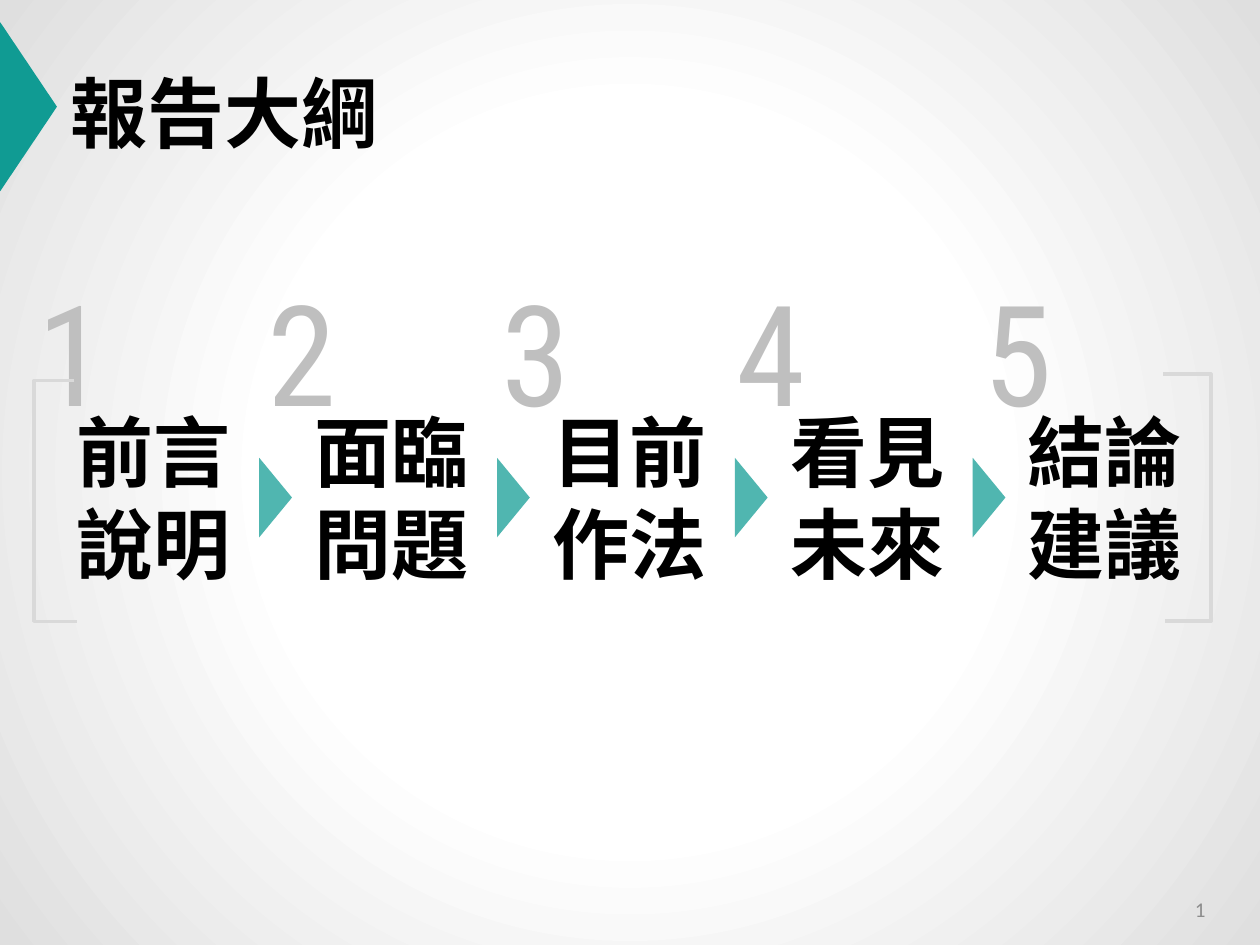
"""Builds the report outline slide with five numbered sections."""
from lxml import etree
from pptx import Presentation
from pptx.dml.color import RGBColor
from pptx.enum.shapes import MSO_SHAPE
from pptx.enum.text import MSO_ANCHOR, MSO_AUTO_SIZE, PP_ALIGN
from pptx.oxml.ns import qn
from pptx.util import Pt

TRIANGLE = MSO_SHAPE.ISOSCELES_TRIANGLE
LEFT, RIGHT = PP_ALIGN.LEFT, PP_ALIGN.RIGHT
TOP, MIDDLE = MSO_ANCHOR.TOP, MSO_ANCHOR.MIDDLE
GROW, FIXED = MSO_AUTO_SIZE.SHAPE_TO_FIT_TEXT, MSO_AUTO_SIZE.NONE


def color(hex_code):
    return RGBColor.from_string(hex_code)


class OutlineSlide:
    """Holds the style and the current slide."""

    TEAL, BLACK, NUMBER_GRAY = "109B93", "000000", "BFBFBF"
    BRACKET_GRAY, PAGE_GRAY = "D9D9D9", "8C8C8C"
    HEADING_FONT, NUMBER_FONT, PAGE_FONT = "Noto Sans CJK SC", "Roboto Condensed", "Calibri"

    def __init__(self, slide):
        self.slide = slide

    def background(self, stops):
        self.slide.background.fill.gradient()
        gradient = next(self.slide.element.iter(qn("a:gradFill")))
        for child in list(gradient):
            gradient.remove(child)
        stop_list = etree.SubElement(gradient, qn("a:gsLst"))
        for percent, hex_code in stops:
            stop = etree.SubElement(stop_list, qn("a:gs"), pos=str(percent * 1000))
            etree.SubElement(stop, qn("a:srgbClr"), val=hex_code)
        circle = etree.SubElement(gradient, qn("a:path"), path="circle")
        etree.SubElement(circle, qn("a:fillToRect"), l="50000", t="50000", r="50000", b="50000")

    def fill_text(self, frame, text, size, font, hex_code, bold=False,
                  align=LEFT, anchor=TOP, fit=GROW):
        frame.text = text
        frame.word_wrap = True
        frame.auto_size = fit
        frame.vertical_anchor = anchor
        for paragraph in frame.paragraphs:
            paragraph.alignment = align
            for run in paragraph.runs:
                run.font.size = Pt(size)
                run.font.name = font
                run.font.bold = bold
                run.font.color.rgb = color(hex_code)
                etree.SubElement(run.font._element, qn("a:ea"), typeface=font)

    def title(self, text, left, top, width, height):
        heading = self.slide.shapes.title
        heading.left, heading.top = Pt(left), Pt(top)
        heading.width, heading.height = Pt(width), Pt(height)
        self.fill_text(heading.text_frame, text, 44, self.HEADING_FONT, self.BLACK, bold=True)

    def text(self, shapes, text, left, top, width, height, *style, **options):
        box = shapes.add_textbox(Pt(left), Pt(top), Pt(width), Pt(height))
        self.fill_text(box.text_frame, text, *style, **options)

    def pointer(self, shapes, left, top, width, height, opacity=100):
        pointer = shapes.add_shape(TRIANGLE, Pt(left), Pt(top), Pt(width), Pt(height))
        pointer.rotation = 90
        pointer.shadow.inherit = False
        pointer.line.fill.background()
        pointer.fill.solid()
        pointer.fill.fore_color.rgb = color(self.TEAL)
        if opacity < 100:
            fill_color = next(pointer.element.iter(qn("a:srgbClr")))
            etree.SubElement(fill_color, qn("a:alpha"), val=str(opacity * 1000))

    def bracket(self, points):
        start, *rest = [(Pt(x), Pt(y)) for x, y in points]
        builder = self.slide.shapes.build_freeform(*start)
        builder.add_line_segments(rest, close=False)
        bracket = builder.convert_to_shape()
        bracket.shadow.inherit = False
        bracket.fill.background()
        bracket.line.color.rgb = color(self.BRACKET_GRAY)
        bracket.line.width = Pt(2)


def main():
    presentation = Presentation()
    presentation.slide_width, presentation.slide_height = Pt(720), Pt(540)
    slide = presentation.slides.add_slide(presentation.slide_layouts[5])
    outline = OutlineSlide(slide)

    outline.background([(0, "FFFFFF"), (46, "FFFFFF"), (100, "DFDFDF")])
    outline.pointer(slide.shapes, -31.9, 44.8, 96.5, 32.4)
    outline.text(slide.shapes, "1", 534, 504.9, 162, 28.8, 12, outline.PAGE_FONT,
                 outline.PAGE_GRAY, align=RIGHT, anchor=MIDDLE, fit=FIXED)

    numbers = slide.shapes.add_group_shape().shapes
    for number, left in enumerate((14.5, 145.5, 279.5, 414, 555), start=1):
        outline.text(numbers, str(number), left, 148.8, 94.3, 104.4, 80,
                     outline.NUMBER_FONT, outline.NUMBER_GRAY)

    sections = ("前言\n說明", "面臨問題", "目前作法", "看見未來", "結論建議")
    steps = slide.shapes.add_group_shape().shapes
    pitch = 135.9
    for index, section in enumerate(sections):
        outline.text(steps, section, 36.7 + index * pitch, 227.5, 105.8, 113.8, 44,
                     outline.HEADING_FONT, outline.BLACK, bold=True)
        if index < len(sections) - 1:
            outline.pointer(steps, 134.8 + index * pitch, 275, 45.4, 18.7, opacity=73)

    outline.title("報告大綱", 33.1, 33.8, 213.8, 60.5)
    outline.bracket([(42.5, 217.5), (19.5, 217.5), (19.5, 355), (44, 355)])
    outline.bracket([(666, 355), (692, 355), (692, 213.8), (664.5, 213.8)])
    presentation.save("out.pptx")


if __name__ == "__main__":
    main()
